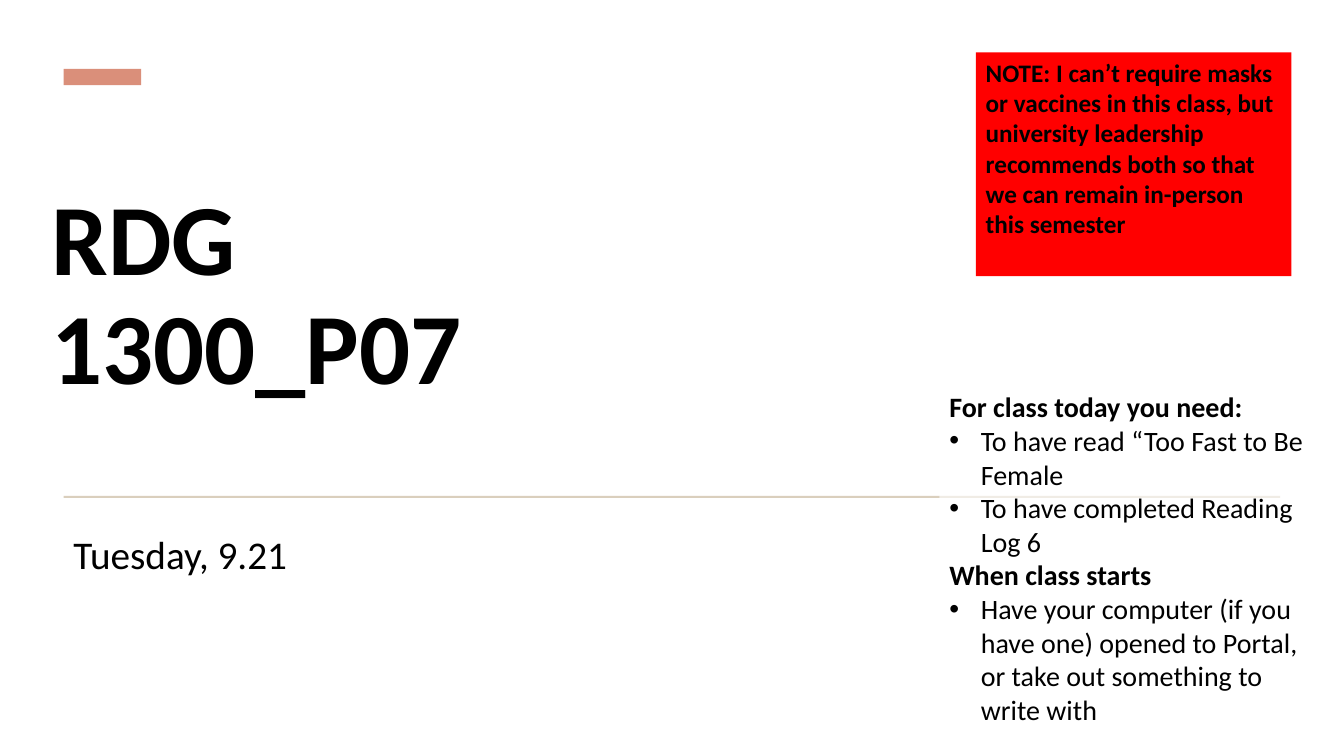
import pptx
import pptx.dml.color
import pptx.enum.shapes
import pptx.enum.text
import pptx.oxml.ns
import pptx.util
from lxml import etree

Pt = pptx.util.Pt
ANCHOR = pptx.enum.text.MSO_ANCHOR

COLORS = {
    "white": "FFFFFF",
    "black": "000000",
    "accent": "DA8F7A",
    "rule": "DACFBD",
    "alert": "FF0000",
}
FONT = "Calibri"
BULLET_INDENT = 22.5

CLASS_LINES = [
    ("For class today you need:", False),
    ("To have read “Too Fast to Be Female", True),
    ("To have completed Reading Log 6", True),
    ("When class starts", False),
    ("Have your computer (if you have one) opened to Portal, "
     "or take out something to write with", True),
]
MASK_NOTE = (
    "NOTE: I can’t require masks or vaccines in this class, but university "
    "leadership recommends both so that we can remain in-person this semester"
)


def place(shape, left, top, width, height):
    shape.left, shape.top = Pt(left), Pt(top)
    shape.width, shape.height = Pt(width), Pt(height)


def fill_shape(shape, color, opacity=100):
    shape.fill.solid()
    shape.fill.fore_color.rgb = pptx.dml.color.RGBColor.from_string(COLORS[color])
    if opacity < 100:
        color_element = shape.fill._xPr.find(".//" + pptx.oxml.ns.qn("a:srgbClr"))
        alpha = etree.SubElement(color_element, pptx.oxml.ns.qn("a:alpha"))
        alpha.set("val", str(opacity * 1000))


def add_bar(slide, box, color):
    shape = slide.shapes.add_shape(
        pptx.enum.shapes.MSO_SHAPE.RECTANGLE, *map(Pt, box))
    shape.shadow.inherit = False
    shape.line.fill.background()
    fill_shape(shape, color)


def prepare_frame(shape, anchor=ANCHOR.TOP):
    frame = shape.text_frame
    frame.word_wrap = True
    frame.auto_size = pptx.enum.text.MSO_AUTO_SIZE.NONE
    frame.vertical_anchor = anchor
    return frame


def add_panel(slide, box, color, opacity=100):
    shape = slide.shapes.add_textbox(*map(Pt, box))
    fill_shape(shape, color, opacity)
    return prepare_frame(shape)


def write_run(paragraph, text, size, bold=False):
    paragraph.alignment = pptx.enum.text.PP_ALIGN.LEFT
    run = paragraph.add_run()
    run.text = text
    run.font.name = FONT
    run.font.size = Pt(size)
    run.font.bold = bold
    run.font.color.rgb = pptx.dml.color.RGBColor.from_string(COLORS["black"])


def add_bullet(paragraph):
    properties = paragraph._p.get_or_add_pPr()
    properties.set("marL", str(Pt(BULLET_INDENT)))
    properties.set("indent", str(-Pt(BULLET_INDENT)))
    font = etree.SubElement(properties, pptx.oxml.ns.qn("a:buFont"))
    font.set("typeface", "Arial")
    bullet = etree.SubElement(properties, pptx.oxml.ns.qn("a:buChar"))
    bullet.set("char", "•")


def write_title(slide):
    title = slide.shapes.title
    place(title, 29.5, 100.8, 365.8, 193)
    fill_shape(title, "white", 48)
    paragraph = prepare_frame(title, ANCHOR.BOTTOM).paragraphs[0]
    paragraph.line_spacing = 0.9
    write_run(paragraph, "RDG 1300_P07", 72, True)


def write_date(slide):
    frame = add_panel(slide, (45.4, 372.2, 277.2, 116.6), "white", 63)
    paragraph = frame.paragraphs[0]
    paragraph.line_spacing = 1.1
    paragraph.space_before = Pt(10)
    write_run(paragraph, "Tuesday, 9.21", 28)


def write_class_list(slide):
    frame = add_panel(slide, (671, 275, 277.2, 249.8), "white", 61)
    for index, (text, bulleted) in enumerate(CLASS_LINES):
        paragraph = frame.add_paragraph() if index else frame.paragraphs[0]
        write_run(paragraph, text, 20, not bulleted)
        if bulleted:
            add_bullet(paragraph)


def write_mask_note(slide):
    frame = add_panel(slide, (697, 37.4, 225.4, 159.8), "alert")
    write_run(frame.paragraphs[0], MASK_NOTE, 18, True)


def main():
    presentation = pptx.Presentation()
    presentation.slide_width, presentation.slide_height = Pt(960), Pt(540)
    slide = presentation.slides.add_slide(presentation.slide_layouts[5])
    add_bar(slide, (45.4, 49.3, 55.4, 11.5), "accent")
    add_bar(slide, (45.4, 354.2, 869, 1.4), "rule")
    write_title(slide)
    write_date(slide)
    write_class_list(slide)
    write_mask_note(slide)
    presentation.save("out.pptx")


if __name__ == "__main__":
    main()
